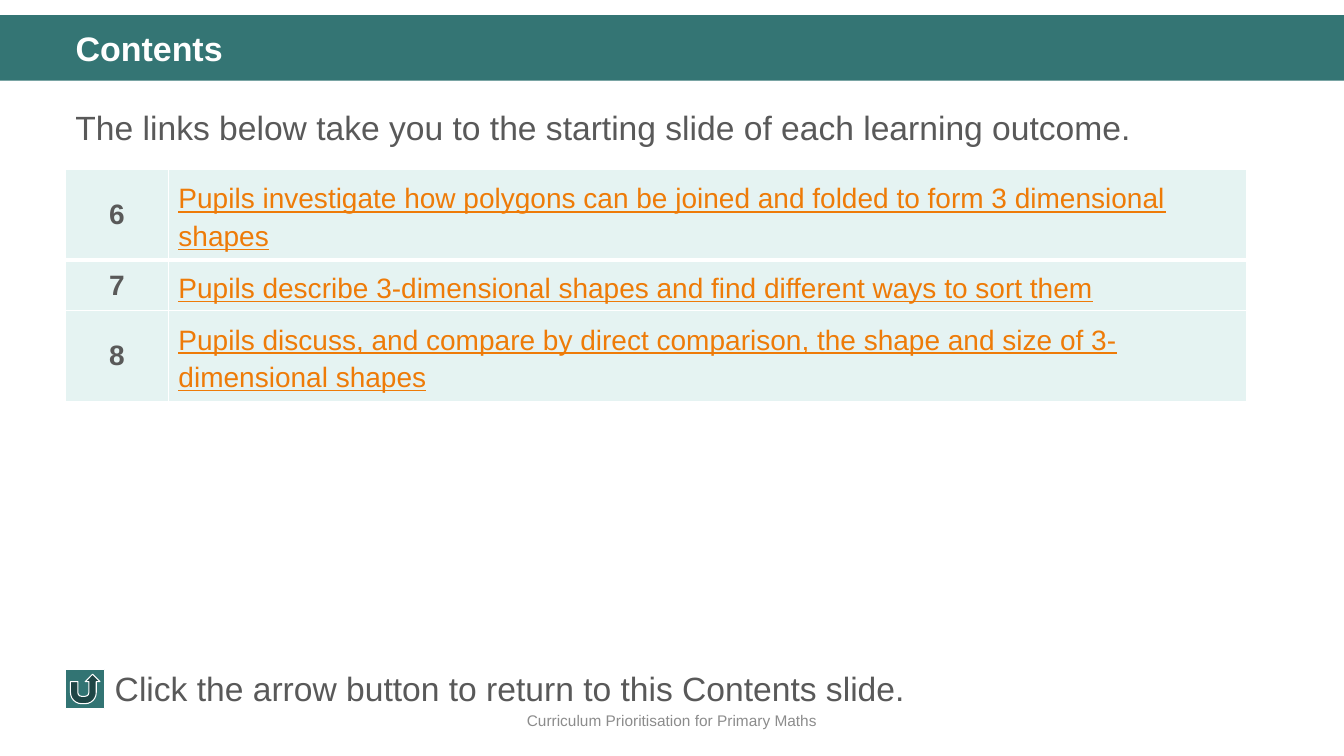
from lxml.etree import SubElement
from pptx import Presentation
from pptx.dml.color import RGBColor
from pptx.enum.shapes import MSO_SHAPE
from pptx.enum.text import MSO_ANCHOR, PP_ALIGN
from pptx.oxml.ns import qn
from pptx.util import Inches, Pt

WHITE = RGBColor(0xFF, 0xFF, 0xFF)
BAND_TEAL = RGBColor(0x34, 0x75, 0x74)
BUTTON_TEAL = RGBColor(0x32, 0x74, 0x73)
CELL_TINT = RGBColor(0xE5, 0xF3, 0xF2)
TEXT_GREY = RGBColor(0x59, 0x59, 0x59)
FOOTER_GREY = RGBColor(0x8C, 0x8C, 0x8C)
LINK_ORANGE = RGBColor(0xEE, 0x7B, 0x08)

SLIDE_WIDTH, SLIDE_HEIGHT = Inches(13.333), Inches(7.5)
LEFT = 4.88  # left margin, in percent of the slide width
COLUMN_SHARES = (7.65, 80.25)
OUTCOMES = (
    ("6", "Pupils investigate how polygons can be joined and folded to form "
          "3 dimensional shapes", 11.07),
    ("7", "Pupils describe 3-dimensional shapes and find different ways to sort them", 6.27),
    ("8", "Pupils discuss, and compare by direct comparison, the shape and size of "
          "3-dimensional shapes", 11.07),
)


def across(percent):
    return round(SLIDE_WIDTH * percent / 100)


def down(percent):
    return round(SLIDE_HEIGHT * percent / 100)


def area(left, top, width, height):
    """Turn percentages of the slide into a left, top, width, height box."""
    return across(left), down(top), across(width), down(height)


def write(frame, text, size, color, bold=False, underline=False,
          align=PP_ALIGN.LEFT, anchor=MSO_ANCHOR.TOP, spacing=1.0):
    frame.word_wrap = True
    frame.vertical_anchor = anchor
    paragraph = frame.paragraphs[0]
    paragraph.alignment = align
    paragraph.line_spacing = spacing
    paragraph.space_before = Pt(0)
    run = paragraph.add_run()
    run.text = text
    font = run.font
    font.name, font.size = "Arial", Pt(size)
    font.bold, font.underline = bold, underline
    font.color.rgb = color


def add_text(slide, box, text, size, color, **options):
    write(slide.shapes.add_textbox(*box).text_frame, text, size, color, **options)


def add_filled_shape(slide, kind, box, fill):
    shape = slide.shapes.add_shape(kind, *box)
    shape.shadow.inherit = False
    shape.fill.solid()
    shape.fill.fore_color.rgb = fill
    shape.line.fill.background()
    return shape


def set_borders(cell, top, bottom):
    properties = cell._tc.get_or_add_tcPr()
    for side, width in (("L", 1), ("R", 1), ("T", top), ("B", bottom)):
        line = SubElement(properties, qn(f"a:ln{side}"), w=str(Pt(width)))
        fill = SubElement(line, qn("a:solidFill"))
        SubElement(fill, qn("a:srgbClr"), val=str(WHITE))


def add_outcomes_table(slide):
    box = area(LEFT, 22.4, sum(COLUMN_SHARES), sum(row[2] for row in OUTCOMES))
    table = slide.shapes.add_table(len(OUTCOMES), len(COLUMN_SHARES), *box).table
    table.first_row = table.horz_banding = False
    for column, share in zip(table.columns, COLUMN_SHARES):
        column.width = across(share)
    for index, (number, outcome, share) in enumerate(OUTCOMES):
        table.rows[index].height = down(share)
        number_cell, outcome_cell = table.rows[index].cells
        for cell in (number_cell, outcome_cell):
            # A thick rule separates the first row from the others
            set_borders(cell, 3 if index == 1 else 1, 3 if index == 0 else 1)
            cell.fill.solid()
            cell.fill.fore_color.rgb = CELL_TINT
            cell.vertical_anchor = MSO_ANCHOR.MIDDLE
        write(number_cell.text_frame, number, 20, TEXT_GREY, bold=True,
              align=PP_ALIGN.CENTER, anchor=MSO_ANCHOR.MIDDLE)
        write(outcome_cell.text_frame, outcome, 20, LINK_ORANGE, underline=True,
              anchor=MSO_ANCHOR.MIDDLE, spacing=1.2)


def add_title(slide):
    title = slide.shapes.title
    title.left, title.top, title.width, title.height = area(LEFT, 3.6, 91.35, 6.27)
    write(title.text_frame, "Contents", 24.3, WHITE, bold=True, spacing=0.9)


def main():
    presentation = Presentation()
    presentation.slide_width, presentation.slide_height = SLIDE_WIDTH, SLIDE_HEIGHT
    slide = presentation.slides.add_slide(presentation.slide_layouts[5])

    # Title on its band; the band goes behind the placeholder
    band = add_filled_shape(slide, MSO_SHAPE.RECTANGLE, area(0, 2, 100, 8.67), BAND_TEAL)
    slide.shapes.title._element.addprevious(band._element)
    add_title(slide)

    # Introduction and learning outcomes
    add_text(slide, area(LEFT, 12.4, 91.35, 46.8),
             "The links below take you to the starting slide of each learning outcome.",
             24, TEXT_GREY, spacing=1.2)
    add_outcomes_table(slide)

    # Return button with its explanation
    button = add_filled_shape(slide, MSO_SHAPE.ACTION_BUTTON_RETURN,
                              area(LEFT, 88.53, 2.92, 5.2), BUTTON_TEAL)
    button.line.color.rgb = WHITE
    button.line.width = Pt(0.75)
    add_text(slide, area(7.8, 87.73, 84.9, 6.67),
             "Click the arrow button to return to this Contents slide.", 24, TEXT_GREY)

    # Footer
    add_text(slide, area(0, 92.67, 100, 5.33), "Curriculum Prioritisation for Primary Maths",
             11, FOOTER_GREY, align=PP_ALIGN.CENTER, anchor=MSO_ANCHOR.MIDDLE)

    presentation.save("out.pptx")


if __name__ == "__main__":
    main()
